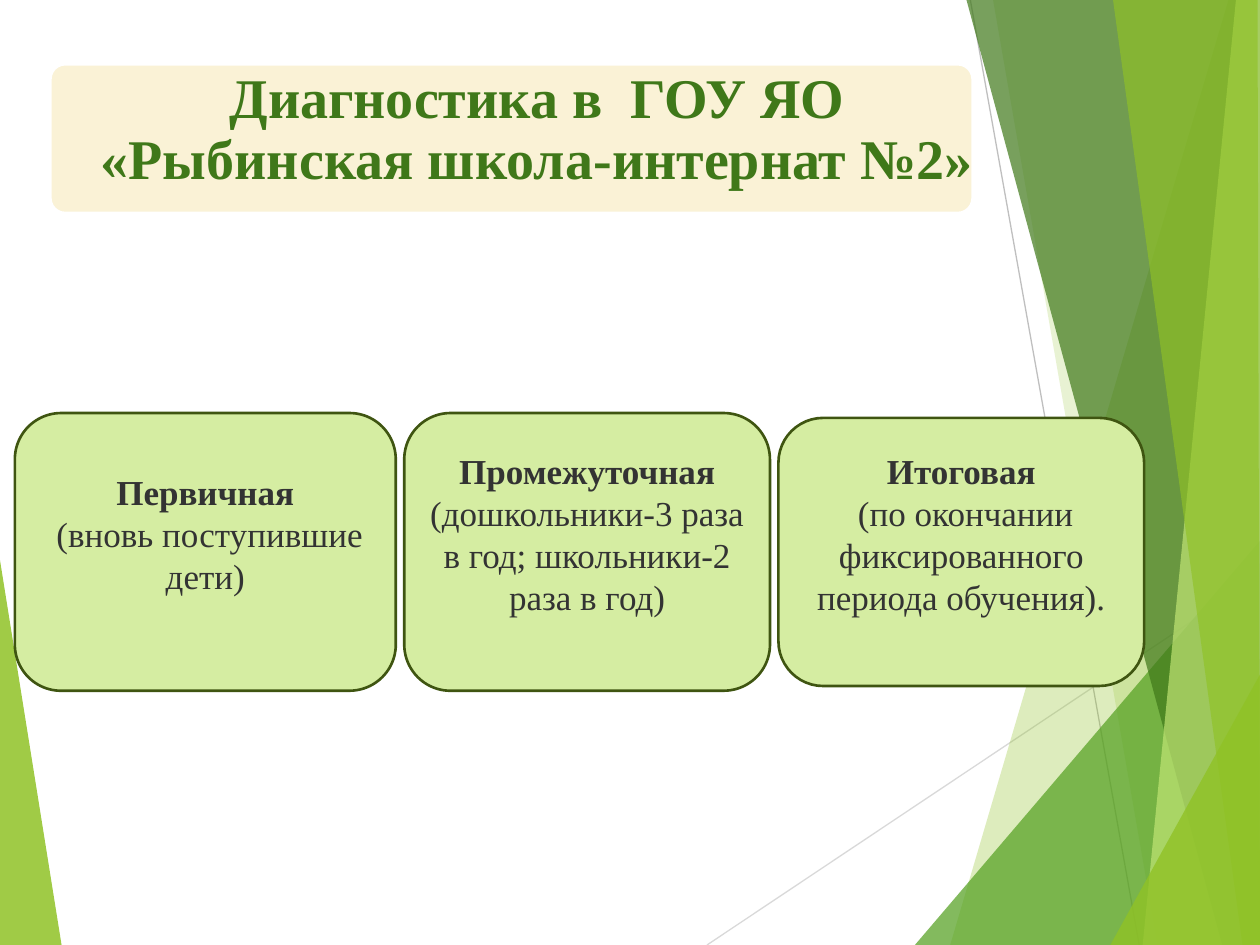
import dataclasses

import pptx
import pptx.dml.color
import pptx.enum.shapes
import pptx.enum.text
import pptx.oxml.ns
import pptx.util
from lxml import etree

Pt = pptx.util.Pt
W, H = 720, 540


@dataclasses.dataclass(frozen=True)
class Theme:
    """Colours, font and type sizes of the slide."""
    lime: str = "90C226"
    pale_lime: str = "C0E474"
    green: str = "54A021"
    dark_green: str = "3F7819"
    cream: str = "FAF1D2"
    white: str = "FFFFFF"
    card: str = "D5EDA2"
    card_line: str = "3F5511"
    ink: str = "333333"
    light_grey: str = "D9D9D9"
    grey: str = "BFBFBF"
    font: str = "Times New Roman"
    title_size: int = 32
    body_size: int = 20


T = Theme()

LINES = [
    ((404, H), (W, 329), T.light_grey),
    ((554.5, 0), (651, H), T.grey),
]
LEFT_BLADE = ([(0, 320), (35.2, H), (0, H)], T.lime, 85)
RIGHT_BLADES = [
    ([(702, 0), (543, H), (W, H), (W, 0)], T.lime, 30),
    ([(567.5, 0), (661.5, H), (W, H), (W, 0)], T.lime, 20),
    ([(522.8, H), (W, 309), (W, H)], T.green, 72),
    ([(552.3, 0), (698.4, H), (W, H), (W, 0)], T.dark_green, 70),
    ([(706.3, 0), (653, H), (W, H), (W, 0)], T.pale_lime, 70),
    ([(636, 0), (710, H), (W, H), (718.6, 0)], T.lime, 65),
    ([(634.5, H), (W, 385.5), (W, H)], T.lime, 80),
]
CARDS = [
    ((8.5, 236, 217.7, 158.7),
     [[("Первичная", True)], [(" (вновь поступившие дети)", False)]]),
    ((231, 236, 209, 158.7),
     [[("Промежуточная ", True),
       ("(дошкольники-3 раза в год; школьники-2 раза в год)", False)]]),
    ((444.8, 238.8, 209, 153.2),
     [[("Итоговая", True)],
      [(" ", True), ("(по окончании фиксированного периода обучения).", False)]]),
]


def rgb(color):
    """Turn a hex string into a colour value."""
    return pptx.dml.color.RGBColor.from_string(color)


def fill(sp, color, opacity=100):
    """Give a shape a solid fill with an opacity in percent, and no shadow."""
    sp.shadow.inherit = False
    sp.fill.solid()
    sp.fill.fore_color.rgb = rgb(color)
    if opacity < 100:
        clr = sp.fill._xPr.find(".//" + pptx.oxml.ns.qn("a:srgbClr"))
        etree.SubElement(clr, pptx.oxml.ns.qn("a:alpha"), val=str(opacity * 1000))


def outline(sp, color, width):
    """Set the line of a shape or connector."""
    sp.line.color.rgb = rgb(color)
    sp.line.width = Pt(width)


def add_blade(s, points, color, opacity):
    """Add a translucent decorative polygon."""
    pts = [(Pt(x), Pt(y)) for x, y in points]
    fb = s.shapes.build_freeform(*pts[0])
    fb.add_line_segments(pts[1:], close=True)
    sp = fb.convert_to_shape()
    fill(sp, color, opacity)
    sp.line.fill.background()


def add_line(s, start, end, color):
    """Add a thin decorative line."""
    kind = pptx.enum.shapes.MSO_CONNECTOR.STRAIGHT
    cx = s.shapes.add_connector(kind, *(Pt(v) for v in start + end))
    outline(cx, color, 0.75)
    etree.SubElement(cx._element.spPr, pptx.oxml.ns.qn("a:effectLst"))


def add_panel(s, box, color, line, opacity=100, radius=0.1667):
    """Add a rounded rectangle."""
    kind = pptx.enum.shapes.MSO_SHAPE.ROUNDED_RECTANGLE
    sp = s.shapes.add_shape(kind, *(Pt(v) for v in box))
    sp.adjustments[0] = radius
    fill(sp, color, opacity)
    outline(sp, line, 1.5)
    return sp


def write(sp, paragraphs, size, color, anchor="TOP", spacing=None, bottom=3.6):
    """Write centred paragraphs of (text, bold) runs into a shape."""
    tf = sp.text_frame
    tf.word_wrap = True
    tf.vertical_anchor = pptx.enum.text.MSO_ANCHOR[anchor]
    tf.margin_bottom = Pt(bottom)
    for i, runs in enumerate(paragraphs):
        p = tf.add_paragraph() if i else tf.paragraphs[0]
        p.alignment = pptx.enum.text.PP_ALIGN.CENTER
        p.line_spacing = spacing
        for text, bold in runs:
            r = p.add_run()
            r.text = text
            r.font.name = T.font
            r.font.size = Pt(size)
            r.font.bold = bold
            r.font.color.rgb = rgb(color)


def add_title(s):
    """Add the cream banner and the heading over it."""
    add_panel(s, (28.8, 36.7, 527, 85), T.cream, T.white, opacity=90, radius=0.1)
    sp = s.shapes.add_textbox(Pt(42.5), Pt(36.7), Pt(529), Pt(77))
    text = "Диагностика в  ГОУ ЯО «Рыбинская школа-интернат №2»"
    write(sp, [[(text, True)]], T.title_size, T.dark_green, spacing=0.9)


def main():
    """Build the slide and save it."""
    prs = pptx.Presentation()
    prs.slide_width, prs.slide_height = Pt(W), Pt(H)
    s = prs.slides.add_slide(prs.slide_layouts[6])
    add_blade(s, *LEFT_BLADE)
    for line in LINES:
        add_line(s, *line)
    for blade in RIGHT_BLADES:
        add_blade(s, *blade)
    add_title(s)
    for box, paragraphs in CARDS:
        sp = add_panel(s, box, T.card, T.card_line)
        write(sp, paragraphs, T.body_size, T.ink, anchor="MIDDLE", bottom=25)
    prs.save("out.pptx")


if __name__ == "__main__":
    main()
